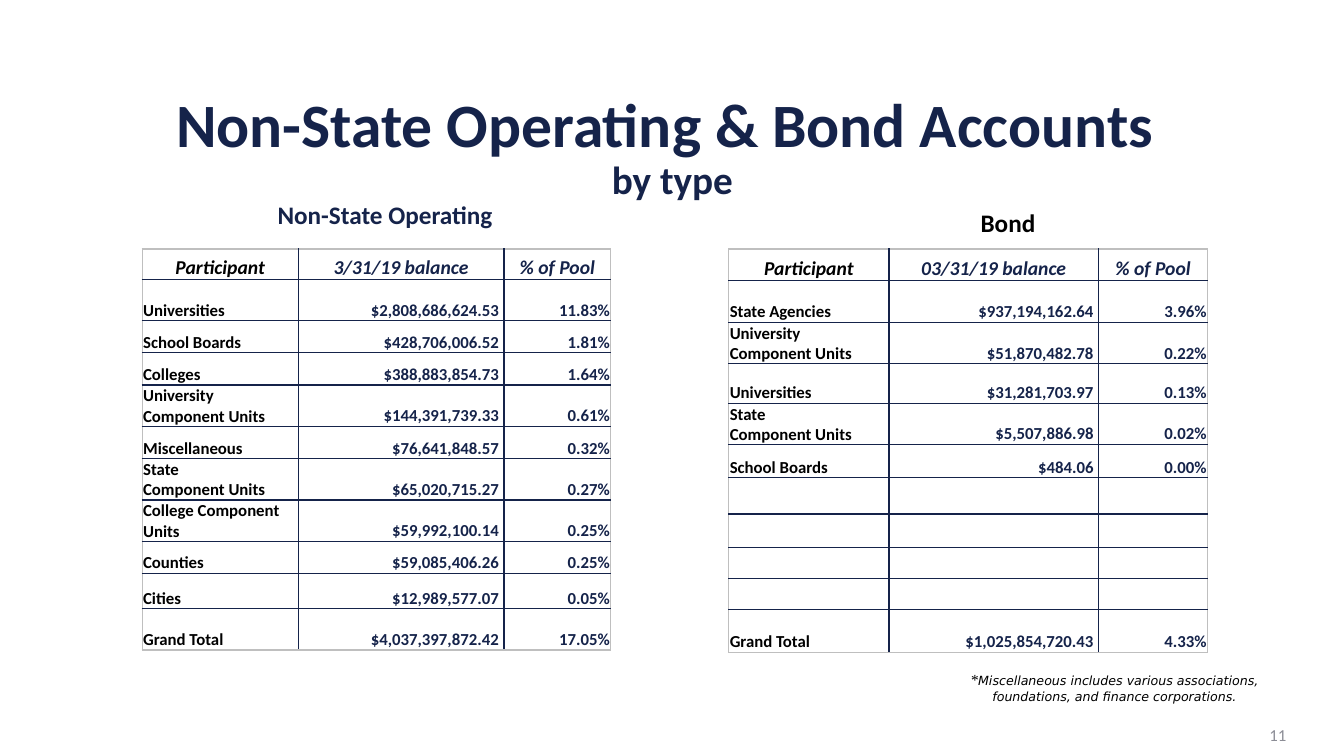
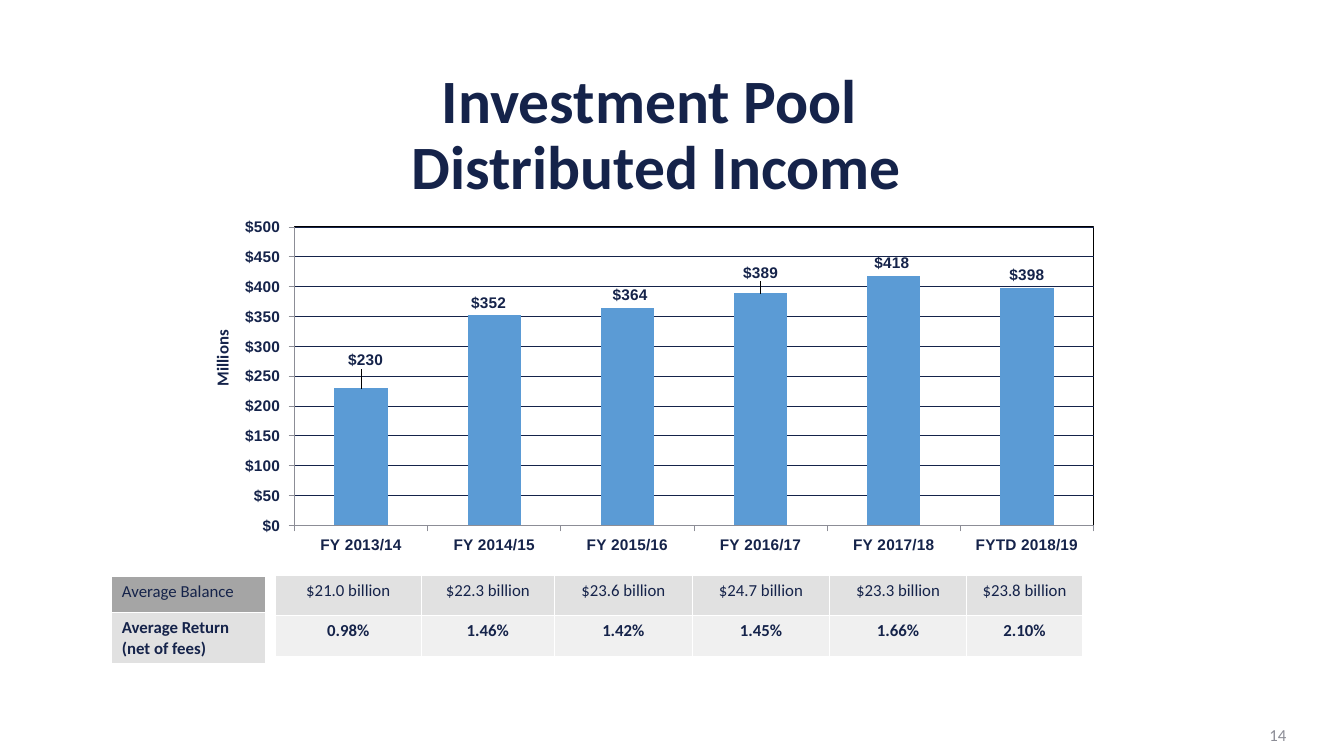
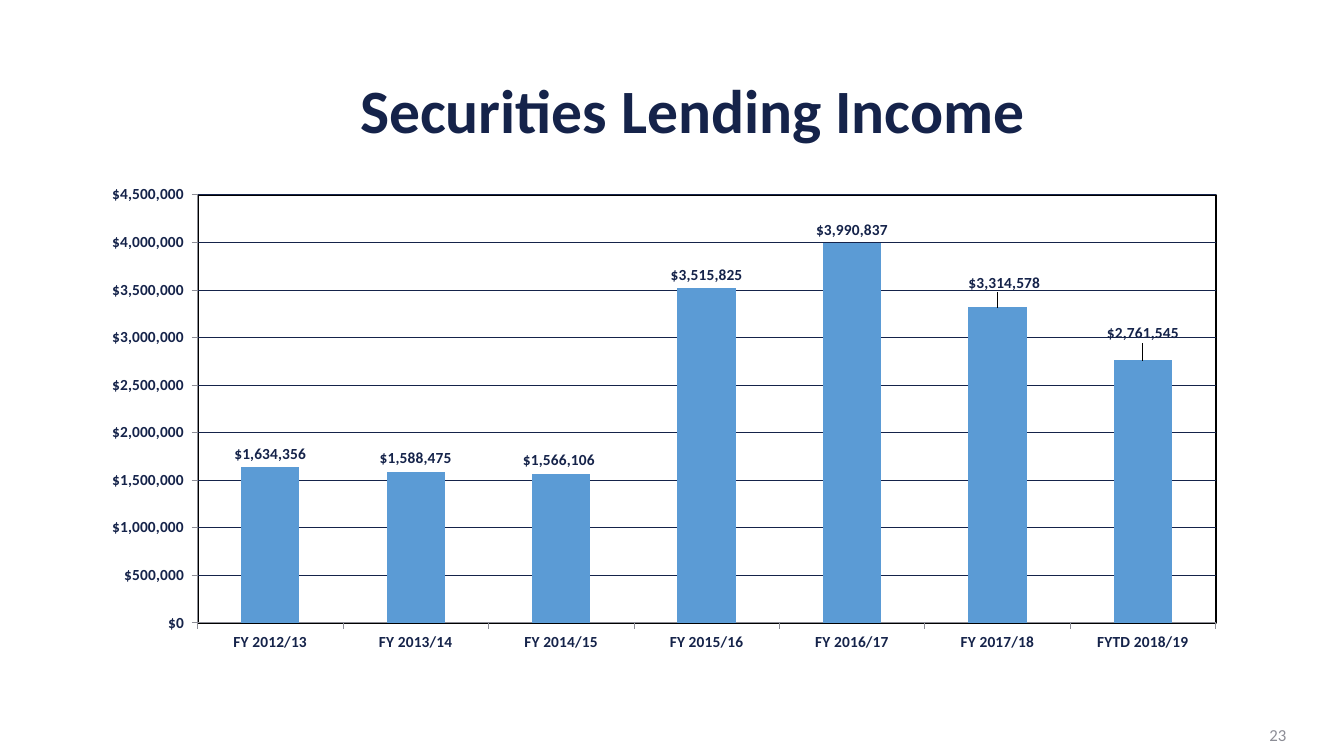
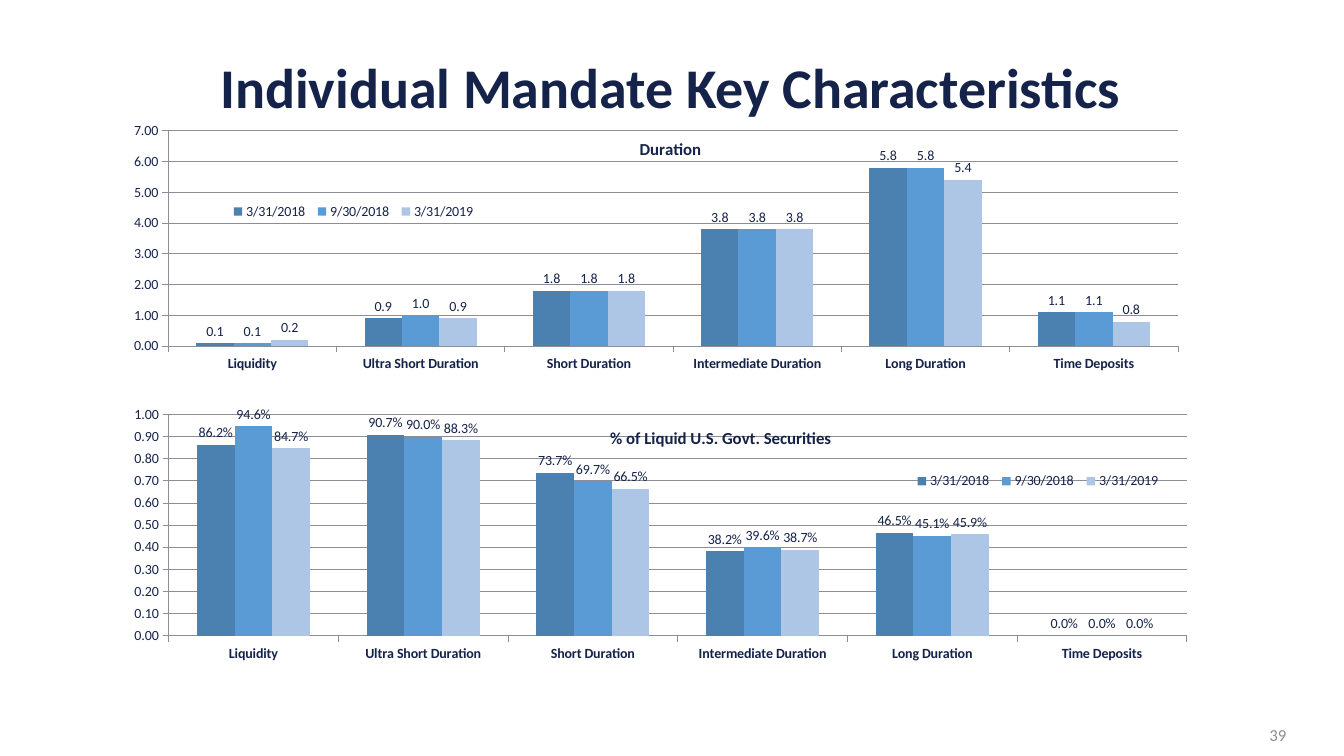
"""Build four slides on investment pool balances, income and mandates."""
from dataclasses import dataclass
from typing import Callable, NamedTuple, Optional

from pptx import Presentation
from pptx.chart.data import CategoryChartData
from pptx.dml.color import RGBColor
from pptx.enum.chart import XL_CHART_TYPE as ChartType
from pptx.enum.chart import XL_LABEL_POSITION as LabelPosition
from pptx.enum.chart import XL_LEGEND_POSITION as LegendPosition
from pptx.enum.chart import XL_TICK_MARK as TickMark
from pptx.enum.text import MSO_ANCHOR as Anchor
from pptx.enum.text import PP_ALIGN as Align
from pptx.oxml import parse_xml
from pptx.oxml.ns import nsdecls, qn
from pptx.util import Emu, Inches, Pt

COLUMNS, ROWS, UNIT = 80, 45, 152400


@dataclass(frozen=True)
class Theme:
    """Colours, fonts and type sizes shared by the deck."""
    navy: str = "15234A"
    black: str = "000000"
    white: str = "FFFFFF"
    grey: str = "8C8D96"
    frame: str = "BFBFBF"
    head_fill: str = "A5A5A5"
    fill: str = "E1E1E1"
    pale_fill: str = "F0F0F0"
    bar: str = "5B9BD5"
    bars: tuple[str, ...] = ("4B81B1", "5B9BD5", "ADC6E5")
    font: str = "Calibri"
    chart_font: str = "Arial"
    note_font: str = "DejaVu Sans"
    mark_font: str = "Times New Roman"
    title: float = 44
    small_title: float = 40
    subtitle: float = 28
    heading: float = 18
    table_head: float = 14
    body: float = 12
    mark: float = 11
    label: float = 11
    small_label: float = 10
    note: float = 9


THEME = Theme()


class Place(NamedTuple):
    """A rectangle in columns and rows of the slide grid."""
    left: float
    top: float
    width: float
    height: float


class Share(NamedTuple):
    """A position, and perhaps a size, in shares of a chart."""
    x: float
    y: float
    w: Optional[float] = None
    h: Optional[float] = None


class Type(NamedTuple):
    """The look of a run of text."""
    size: float
    color: str = THEME.navy
    bold: bool = False
    italic: bool = False
    font: str = THEME.font


class Span(NamedTuple):
    """A run of text with its look."""
    text: str
    look: Type


class CellStyle(NamedTuple):
    """The look of one table cell."""
    look: Type
    align: Align = Align.LEFT
    fill: Optional[str] = None
    anchor: Anchor = Anchor.TOP
    insets: tuple[float, float, float, float] = (0.1, 0.05, 0.1, 0.05)


@dataclass(frozen=True)
class TablePlan:
    """A table with its grid, words and cell styles."""
    place: Place
    widths: tuple[float, ...]
    heights: tuple[float, ...]
    texts: list[tuple[str, ...]]
    style: Callable[[int, int], CellStyle]
    inner: str = THEME.white
    outer: str = THEME.white


@dataclass(frozen=True)
class ChartPlan:
    """A column chart with its data and settings."""
    place: Place
    categories: tuple[str, ...]
    series: dict[str, tuple[float, ...]]
    colors: tuple[str, ...]
    plot: Share
    top: float
    step: float
    axis_format: str
    label_format: str
    category_type: Type
    value_type: Type
    label_type: Type
    grid: str
    border: Optional[float] = None
    title: Optional[str] = None
    title_at: Share = Share(0, 0)
    legend_at: Optional[Share] = None
    axis_title: Optional[str] = None
    offsets: tuple[tuple[int, Share], ...] = ()


def cells(count: float) -> Emu:
    """Turn grid cells into a length."""
    return Emu(round(count * UNIT))


def area(place: Place) -> tuple[Emu, ...]:
    """Turn a place into lengths."""
    return tuple(cells(count) for count in place)


def style_font(font, look: Type) -> None:
    """Apply a look to a font."""
    font.name, font.size = look.font, Pt(look.size)
    font.bold, font.italic = look.bold, look.italic
    font.color.rgb = RGBColor.from_string(look.color)


def add_span(para, span: Span) -> None:
    """Add one run to a paragraph."""
    run = para.add_run()
    run.text = span.text
    style_font(run.font, span.look)


def add_text(page, place: Place, lines: list[list[Span]], align: Align = Align.CENTER,
             anchor: Anchor = Anchor.TOP, spacing: float = 1.0) -> None:
    """Add a text box whose lines form one paragraph."""
    frame = page.shapes.add_textbox(*area(place)).text_frame
    frame.word_wrap, frame.vertical_anchor = True, anchor
    para = frame.paragraphs[0]
    para.alignment, para.line_spacing = align, spacing
    for number, line in enumerate(lines):
        if number:
            para.add_line_break()
        for span in line:
            add_span(para, span)


def add_page(deck, number: int, title_place: Place, *title: Span):
    """Add a blank slide with its title and page number."""
    page = deck.slides.add_slide(deck.slide_layouts[6])
    add_text(page, title_place, [[span] for span in title], anchor=Anchor.MIDDLE, spacing=0.9)
    add_text(page, Place(59.16, 42.54, 18, 2.4),
             [[Span(str(number), Type(THEME.body, THEME.grey))]], Align.RIGHT, Anchor.MIDDLE)
    return page


def title_span(text: str, size: float = THEME.title) -> Span:
    """Make a run in the title style."""
    return Span(text, Type(size, bold=True))


def set_borders(cell, colors: dict[str, str]) -> None:
    """Draw the four borders of a cell, in left, right, top, bottom order."""
    properties = cell._tc.get_or_add_tcPr()
    for index, (side, color) in enumerate(colors.items()):
        properties.insert(index, parse_xml(
            f'<a:ln{side} {nsdecls("a")} w="12700"><a:solidFill><a:srgbClr val="{color}"/>'
            f'</a:solidFill></a:ln{side}>'))


def fill_cell(cell, text: str, style: CellStyle) -> None:
    """Write and colour one cell."""
    cell.vertical_anchor = style.anchor
    (cell.margin_left, cell.margin_top,
     cell.margin_right, cell.margin_bottom) = map(Inches, style.insets)
    if style.fill:
        cell.fill.solid()
        cell.fill.fore_color.rgb = RGBColor.from_string(style.fill)
    else:
        cell.fill.background()
    for number, line in enumerate(text.split("\n")):
        frame = cell.text_frame
        para = frame.add_paragraph() if number else frame.paragraphs[0]
        para.alignment = style.align
        if line:
            add_span(para, Span(line, style.look))


def add_table(page, plan: TablePlan) -> None:
    """Add a table."""
    last_row, last_column = len(plan.heights) - 1, len(plan.widths) - 1
    table = page.shapes.add_table(last_row + 1, last_column + 1, *area(plan.place)).table
    table.first_row = table.horz_banding = False
    for column, width in zip(table.columns, plan.widths):
        column.width = cells(width)
    for row, height in zip(table.rows, plan.heights):
        row.height = cells(height)
    for down, texts in enumerate(plan.texts):
        for across, text in enumerate(texts):
            cell = table.cell(down, across)
            fill_cell(cell, text, plan.style(down, across))
            edges = {"L": across == 0, "R": across == last_column,
                     "T": down == 0, "B": down == last_row}
            set_borders(cell, {side: plan.outer if edge else plan.inner
                               for side, edge in edges.items()})


def set_layout(parent, share: Share, after: Optional[str] = None,
               inner: bool = False, edge: bool = True) -> None:
    """Give a chart part a manual layout."""
    target = '<c:layoutTarget val="inner"/>' if inner else ""
    modes = '<c:xMode val="edge"/><c:yMode val="edge"/>' if edge else ""
    sizes = "".join(f'<c:{name} val="{value}"/>'
                    for name, value in share._asdict().items() if value is not None)
    layout = parse_xml(f'<c:layout {nsdecls("c")}><c:manualLayout>{target}{modes}{sizes}'
                       '</c:manualLayout></c:layout>')
    old = parent.find(qn("c:layout"))
    if old is not None:
        parent.remove(old)
    if after:
        parent.find(qn(after)).addnext(layout)
    else:
        parent.insert(0, layout)


def area_format(border: Optional[float] = None):
    """Make the format of an unfilled chart area."""
    line = (f'<a:ln w="{Pt(border)}"><a:solidFill><a:srgbClr val="{THEME.black}"/>'
            '</a:solidFill></a:ln>' if border else '<a:ln><a:noFill/></a:ln>')
    return parse_xml(f'<c:spPr {nsdecls("c", "a")}><a:noFill/>{line}</c:spPr>')


def style_line(line, color: str) -> None:
    """Draw a thin chart line."""
    line.color.rgb, line.width = RGBColor.from_string(color), Pt(0.5)


def style_axes(chart, plan: ChartPlan) -> None:
    """Set the axes and gridlines of a chart."""
    axis = chart.value_axis
    for each, look in ((chart.category_axis, plan.category_type), (axis, plan.value_type)):
        style_font(each.tick_labels.font, look)
        style_line(each.format.line, THEME.grey)
        each.major_tick_mark, each.minor_tick_mark = TickMark.OUTSIDE, TickMark.NONE
    axis.minimum_scale, axis.maximum_scale, axis.major_unit = 0, plan.top, plan.step
    axis.tick_labels.number_format = plan.axis_format
    axis.tick_labels.number_format_is_linked = False
    axis.has_major_gridlines = True
    style_line(axis.major_gridlines.format.line, plan.grid)
    if plan.axis_title:
        title = axis.axis_title
        add_span(title.text_frame.paragraphs[0],
                 Span(plan.axis_title, Type(THEME.body, bold=True)))
        body = title.element.find(".//" + qn("a:bodyPr"))
        body.set("rot", "-5400000")
        body.set("vert", "horz")
        set_layout(title.element, Share(0.02, 0.38), "c:tx")


def style_bars(chart, plan: ChartPlan) -> None:
    """Colour the bars and label their values."""
    plot = chart.plots[0]
    plot.gap_width, plot.vary_by_categories = 150, False
    for series, color in zip(plot.series, plan.colors):
        series.format.fill.solid()
        series.format.fill.fore_color.rgb = RGBColor.from_string(color)
        labels = series.data_labels
        labels.show_value, labels.position = True, LabelPosition.OUTSIDE_END
        labels.number_format, labels.number_format_is_linked = plan.label_format, False
        style_font(labels.font, plan.label_type)
    for index, _ in plan.offsets:
        label = plot.series[0].points[index].data_label
        style_font(label.font, plan.label_type)
        label.position = LabelPosition.OUTSIDE_END
    for element, (_, offset) in zip(chart.element.iter(qn("c:dLbl")), plan.offsets):
        set_layout(element, offset, "c:idx", edge=False)
        number = parse_xml(f'<c:numFmt {nsdecls("c")} formatCode="" sourceLinked="0"/>')
        number.set("formatCode", plan.label_format)
        element.find(qn("c:layout")).addnext(number)


def add_chart(page, plan: ChartPlan) -> None:
    """Add a clustered column chart."""
    data = CategoryChartData()
    data.categories = plan.categories
    for name, values in plan.series.items():
        data.add_series(name, values)
    chart = page.shapes.add_chart(ChartType.COLUMN_CLUSTERED, *area(plan.place), data).chart
    style_font(chart.font, Type(plan.label_type.size))
    chart.has_title = bool(plan.title)
    if plan.title:
        add_span(chart.chart_title.text_frame.paragraphs[0],
                 Span(plan.title, Type(THEME.body, bold=True)))
        set_layout(chart.chart_title.element, plan.title_at, "c:tx")
    chart.has_legend = bool(plan.legend_at)
    if plan.legend_at:
        chart.legend.position = LegendPosition.RIGHT
        chart.legend.include_in_layout = False
        style_font(chart.legend.font, Type(THEME.small_label))
        set_layout(chart.element.find(".//" + qn("c:legend")), plan.legend_at, "c:legendPos")
    style_axes(chart, plan)
    style_bars(chart, plan)
    plot_area = chart.element.find(".//" + qn("c:plotArea"))
    set_layout(plot_area, plan.plot, inner=True)
    plot_area.append(area_format(plan.border))
    chart.element.find(qn("c:chart")).addnext(area_format())


def balance_style(down: int, across: int) -> CellStyle:
    """Style a cell of an account balance table."""
    color = THEME.navy if across else THEME.black
    insets = (0.01, 0.01, 0.05 if down and across == 1 else 0.01, 0)
    if down == 0:
        return CellStyle(Type(THEME.table_head, color, True, True), Align.CENTER,
                         anchor=Anchor.BOTTOM, insets=insets)
    return CellStyle(Type(THEME.body, color, True), Align.RIGHT if across else Align.LEFT,
                     anchor=Anchor.BOTTOM, insets=insets)


def average_label_style(down: int, across: int) -> CellStyle:
    """Style a row label of the averages."""
    return CellStyle(Type(THEME.body, bold=down == 1),
                     fill=(THEME.head_fill, THEME.fill)[down])


def average_style(down: int, across: int) -> CellStyle:
    """Style a value of the averages."""
    return CellStyle(Type(THEME.body, bold=down == 1), Align.CENTER,
                     (THEME.fill, THEME.pale_fill)[down])


def accounts_page(deck) -> None:
    """Build the slide of account balances."""
    page = add_page(deck, 11, Place(5.52, 4.5, 69, 8.7),
                    title_span("Non-State Operating & Bond Accounts "),
                    title_span("by type", THEME.subtitle))
    operating = [
        ("Participant", "3/31/19 balance", "% of Pool"),
        ("Universities", "$2,808,686,624.53", "11.83%"),
        ("School Boards", "$428,706,006.52", "1.81%"),
        ("Colleges", "$388,883,854.73", "1.64%"),
        ("University Component Units", "$144,391,739.33", "0.61%"),
        ("Miscellaneous", "$76,641,848.57", "0.32%"),
        ("State\nComponent Units", "$65,020,715.27", "0.27%"),
        ("College Component Units", "$59,992,100.14", "0.25%"),
        ("Counties", "$59,085,406.26", "0.25%"),
        ("Cities", "$12,989,577.07", "0.05%"),
        ("Grand Total", "$4,037,397,872.42", "17.05%"),
    ]
    bond = [
        ("Participant", "03/31/19 balance", "% of Pool"),
        ("State Agencies", "$937,194,162.64", "3.96%"),
        ("University\nComponent Units", "$51,870,482.78", "0.22%"),
        ("Universities", "$31,281,703.97", "0.13%"),
        ("State\nComponent Units", "$5,507,886.98", "0.02%"),
        ("School Boards", "$484.06", "0.00%"),
        *[("", "", "")] * 4,
        ("Grand Total", "$1,025,854,720.43", "4.33%"),
    ]
    add_table(page, TablePlan(
        Place(8.46, 14.82, 27.9, 23.82), (9.3, 12.24, 6.36),
        (1.8, 2.46, *[1.92] * 7, 2.1, 2.46), operating, balance_style,
        THEME.navy, THEME.frame))
    add_table(page, TablePlan(
        Place(43.38, 14.82, 28.5, 23.88), (9.54, 12.48, 6.48),
        (1.86, 2.52, 1.98, 2.34, 1.98, 1.98, 2.16, 1.98, 1.86, 1.86, 2.52), bond,
        balance_style, THEME.navy, THEME.frame))
    for left, top, heading, color in ((15.18, 11.58, "Non-State Operating", THEME.navy),
                                      (52.26, 12.06, "Bond", THEME.black)):
        add_text(page, Place(left, top, 15.48, 2.4),
                 [[Span(heading, Type(THEME.heading, color, True))]])
    note = "Miscellaneous includes various associations, foundations, and finance corporations."
    add_text(page, Place(56.34, 39.6, 19.98, 2.64), [[
        Span("*", Type(THEME.mark, THEME.black, italic=True, font=THEME.mark_font)),
        Span(note, Type(THEME.note, THEME.black, italic=True, font=THEME.note_font))]])


DOLLAR_AXIS = '"$"#,##0_);[Red]\\("$"#,##0\\)'
DOLLAR_LABEL = '"$"#,##0'


def distributed_page(deck) -> None:
    """Build the slide of distributed income."""
    page = add_page(deck, 14, Place(12.6, 4.38, 52.98, 7.5),
                    title_span("Investment Pool "), title_span("Distributed Income"))
    look = Type(THEME.label, bold=True, font=THEME.chart_font)
    add_chart(page, ChartPlan(
        Place(11.28, 10.92, 54.36, 22.5),
        ("FY 2013/14", "FY 2014/15", "FY 2015/16", "FY 2016/17", "FY 2017/18", "FYTD 2018/19"),
        {"Series 1": (230, 352, 364, 389, 418, 398)}, (THEME.bar,),
        Share(0.115, 0.115, 0.875, 0.79), 500, 50, DOLLAR_AXIS, DOLLAR_LABEL,
        look, look, look, THEME.navy, border=1, axis_title="Millions",
        offsets=((0, Share(0.005, -0.04)), (1, Share(-0.006, 0)), (2, Share(0.003, 0)),
                 (3, Share(0, -0.02)), (4, Share(-0.002, 0)))))
    add_table(page, TablePlan(
        Place(6.66, 34.32, 9.18, 4.86), (9.18,), (2.16, 2.7),
        [("Average Balance",), ("Average Return\n(net of fees)",)], average_label_style))
    add_table(page, TablePlan(
        Place(16.38, 34.26, 48.06, 4.8), (8.7, 7.92, 8.22, 8.16, 8.16, 6.9), (2.4, 2.4),
        [("$21.0 billion", "$22.3 billion", "$23.6 billion",
          "$24.7 billion", "$23.3 billion", "$23.8 billion"),
         ("0.98%", "1.46%", "1.42%", "1.45%", "1.66%", "2.10%")], average_style))


def lending_page(deck) -> None:
    """Build the slide of securities lending income."""
    page = add_page(deck, 23, Place(14.76, 3.84, 52.98, 5.82),
                    title_span("Securities Lending Income"))
    look = Type(THEME.label, bold=True)
    add_chart(page, ChartPlan(
        Place(5.4, 10.5, 68.4, 28.86),
        ("FY 2012/13", "FY 2013/14", "FY 2014/15", "FY 2015/16", "FY 2016/17",
         "FY 2017/18", "FYTD 2018/19"),
        {"Series 1": (1634356, 1588475, 1566106, 3515825, 3990837, 3314578, 2761545)},
        (THEME.bar,), Share(0.093, 0.038, 0.886, 0.883), 4500000, 500000,
        DOLLAR_AXIS, DOLLAR_LABEL, look, look, look, THEME.navy, border=1.5,
        offsets=((2, Share(-0.002, 0)), (5, Share(0.006, -0.023)), (6, Share(0, -0.027)))))


def mandates_page(deck) -> None:
    """Build the slide of mandate characteristics."""
    page = add_page(deck, 39, Place(5.4, 3.18, 69, 4.38),
                    title_span("Individual Mandate Key Characteristics", THEME.small_title))
    dates = ("3/31/2018", "9/30/2018", "3/31/2019")
    duration = ((0.1, 0.9, 1.8, 3.8, 5.8, 1.1),
                (0.1, 1.0, 1.8, 3.8, 5.8, 1.1),
                (0.2, 0.9, 1.8, 3.8, 5.4, 0.8))
    liquid = ((0.862, 0.907, 0.737, 0.382, 0.465, 0),
              (0.946, 0.9, 0.697, 0.396, 0.451, 0),
              (0.847, 0.883, 0.665, 0.387, 0.459, 0))
    look = Type(THEME.small_label)
    for title, place, values, top, step, label_format, title_at, legend_at in (
            ("Duration", Place(6.84, 6.9, 66.06, 15.6), duration, 7, 1, "#,##0.0",
             Share(0.47, 0.07), Share(0.1, 0.32, 0.23, 0.09)),
            ("% of Liquid U.S. Govt. Securities", Place(6.84, 23.76, 66.6, 16.02), liquid,
             1, 0.1, "0.0%", Share(0.44, 0.09), Share(0.71, 0.26, 0.23, 0.09))):
        add_chart(page, ChartPlan(
            place, ("Liquidity", "Ultra Short Duration", "Short Duration",
                    "Intermediate Duration", "Long Duration", "Time Deposits"),
            dict(zip(dates, values)), THEME.bars, Share(0.048, 0.057, 0.91, 0.822),
            top, step, "#,##0.00", label_format, look._replace(bold=True), look, look,
            THEME.grey, title=title, title_at=title_at, legend_at=legend_at))


def main() -> None:
    """Build and save the deck."""
    deck = Presentation()
    deck.slide_width, deck.slide_height = cells(COLUMNS), cells(ROWS)
    for build in (accounts_page, distributed_page, lending_page, mandates_page):
        build(deck)
    deck.save("out.pptx")


if __name__ == "__main__":
    main()
